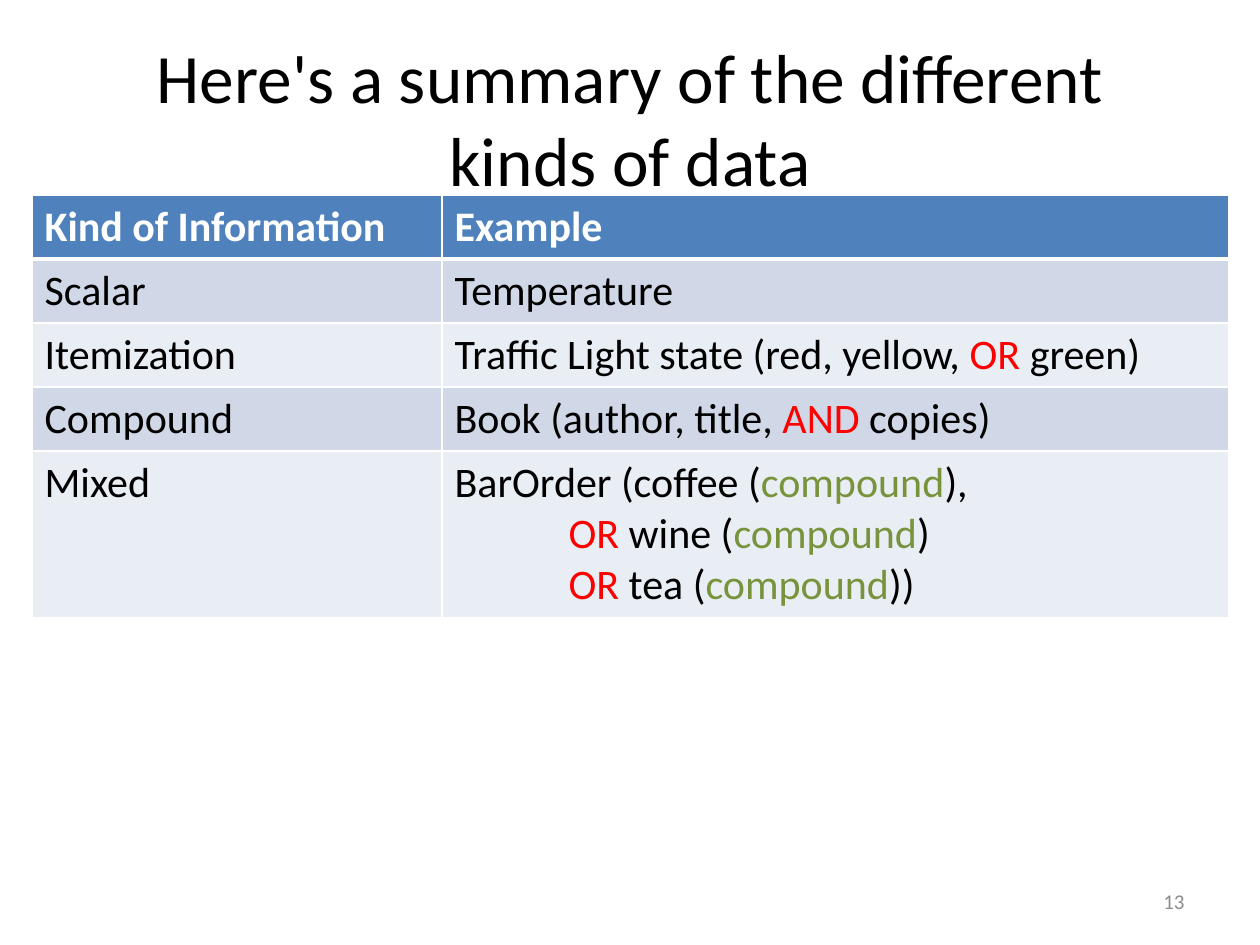
"""Build a slide that summarises the kinds of data in a table."""
from dataclasses import dataclass

from lxml import etree
from pptx import Presentation
from pptx.dml.color import RGBColor
from pptx.enum.text import MSO_ANCHOR, MSO_AUTO_SIZE, PP_ALIGN
from pptx.oxml.ns import qn
from pptx.util import Emu, Pt

CENTER, RIGHT = PP_ALIGN.CENTER, PP_ALIGN.RIGHT
MIDDLE = MSO_ANCHOR.MIDDLE
NO_AUTOFIT = MSO_AUTO_SIZE.NONE

EMU_PER_PX = 914400 / 126
FONT = "Calibri"
BLACK, WHITE, GRAY = "000000", "FFFFFF", "8C8C8C"
RED, GREEN = "FF0000", "77933C"
HEADER_FILL = "4F81BD"
BAND_FILLS = ("D0D8E8", "E9EDF4")
COL_WIDTHS = (410, 787)
ROW_HEIGHTS = (64, 64, 64, 64, 166)


@dataclass(frozen=True)
class Span:
    text: str
    color: str = BLACK


@dataclass(frozen=True)
class Line:
    spans: tuple[Span, ...]
    indent: int = 0


@dataclass(frozen=True)
class Kind:
    name: str
    example: tuple[Line, ...]


def drink(name: str, ending: str) -> Line:
    return Line((Span("OR", RED), Span(f" {name} ("),
                 Span("compound", GREEN), Span(ending)), indent=114)


KINDS = (
    Kind("Scalar", (Line((Span("Temperature"),)),)),
    Kind("Itemization", (Line((Span("Traffic Light state (red, yellow, "),
                               Span("OR ", RED), Span("green)"))),)),
    Kind("Compound", (Line((Span("Book (author, title, "),
                            Span("AND", RED), Span(" copies)"))),)),
    Kind("Mixed", (Line((Span("BarOrder (coffee ("),
                         Span("compound", GREEN), Span("),"))),
                   drink("wine", ")"),
                   drink("tea", "))"))),
)


def px(n: int) -> Emu:
    return Emu(round(n * EMU_PER_PX))


def rgb(color: str) -> RGBColor:
    return RGBColor.from_string(color)


def format_run(r, size: float, color: str, bold: bool = False) -> None:
    r.font.name = FONT
    r.font.size = Pt(size)
    r.font.bold = bold
    r.font.color.rgb = rgb(color)


def set_label(sp, text: str, size: float, color: str, align) -> None:
    tf = sp.text_frame
    tf.text = text
    tf.word_wrap = True
    tf.auto_size = NO_AUTOFIT
    tf.vertical_anchor = MIDDLE
    p = tf.paragraphs[0]
    p.alignment = align
    format_run(p.runs[0], size, color)


def set_borders(cell, bottom: int) -> None:
    tc_pr = cell._tc.get_or_add_tcPr()
    widths = {"lnL": 1, "lnR": 1, "lnT": 1, "lnB": bottom}
    for i, (tag, width) in enumerate(widths.items()):
        ln = etree.Element(qn(f"a:{tag}"), w=str(Pt(width)))
        fill = etree.SubElement(ln, qn("a:solidFill"))
        etree.SubElement(fill, qn("a:srgbClr"), val=WHITE)
        tc_pr.insert(i, ln)


def fill_cell(cell, lines: tuple[Line, ...], fill: str, header: bool = False) -> None:
    cell.fill.solid()
    cell.fill.fore_color.rgb = rgb(fill)
    set_borders(cell, 3 if header else 1)
    tf = cell.text_frame
    for i, line in enumerate(lines):
        p = tf.add_paragraph() if i else tf.paragraphs[0]
        if line.indent:
            p._p.get_or_add_pPr().set("marL", str(px(line.indent)))
        for span in line.spans:
            r = p.add_run()
            r.text = span.text
            format_run(r, 24, span.color, header)


def add_kinds_table(s) -> None:
    table = s.shapes.add_table(len(ROW_HEIGHTS), len(COL_WIDTHS), px(32), px(195),
                               px(sum(COL_WIDTHS)), px(sum(ROW_HEIGHTS))).table
    for column, width in zip(table.columns, COL_WIDTHS):
        column.width = px(width)
    for row, height in zip(table.rows, ROW_HEIGHTS):
        row.height = px(height)
    for col, text in enumerate(("Kind of Information", "Example")):
        fill_cell(table.cell(0, col), (Line((Span(text, WHITE),)),), HEADER_FILL, True)
    for row, kind in enumerate(KINDS, start=1):
        fill = BAND_FILLS[(row - 1) % 2]
        fill_cell(table.cell(row, 0), (Line((Span(kind.name),)),), fill)
        fill_cell(table.cell(row, 1), kind.example, fill)


def main() -> None:
    prs = Presentation()
    prs.slide_width, prs.slide_height = px(1260), px(945)
    s = prs.slides.add_slide(prs.slide_layouts[5])
    title = s.shapes.title
    title.left, title.top, title.width, title.height = px(63), px(38), px(1134), px(158)
    set_label(title, "Here's a summary of the different kinds of data", 39.6, BLACK, CENTER)
    add_kinds_table(s)
    number = s.shapes.add_textbox(px(903), px(876), px(294), px(50))
    set_label(number, "13", 12, GRAY, RIGHT)
    prs.save("out.pptx")


if __name__ == "__main__":
    main()
